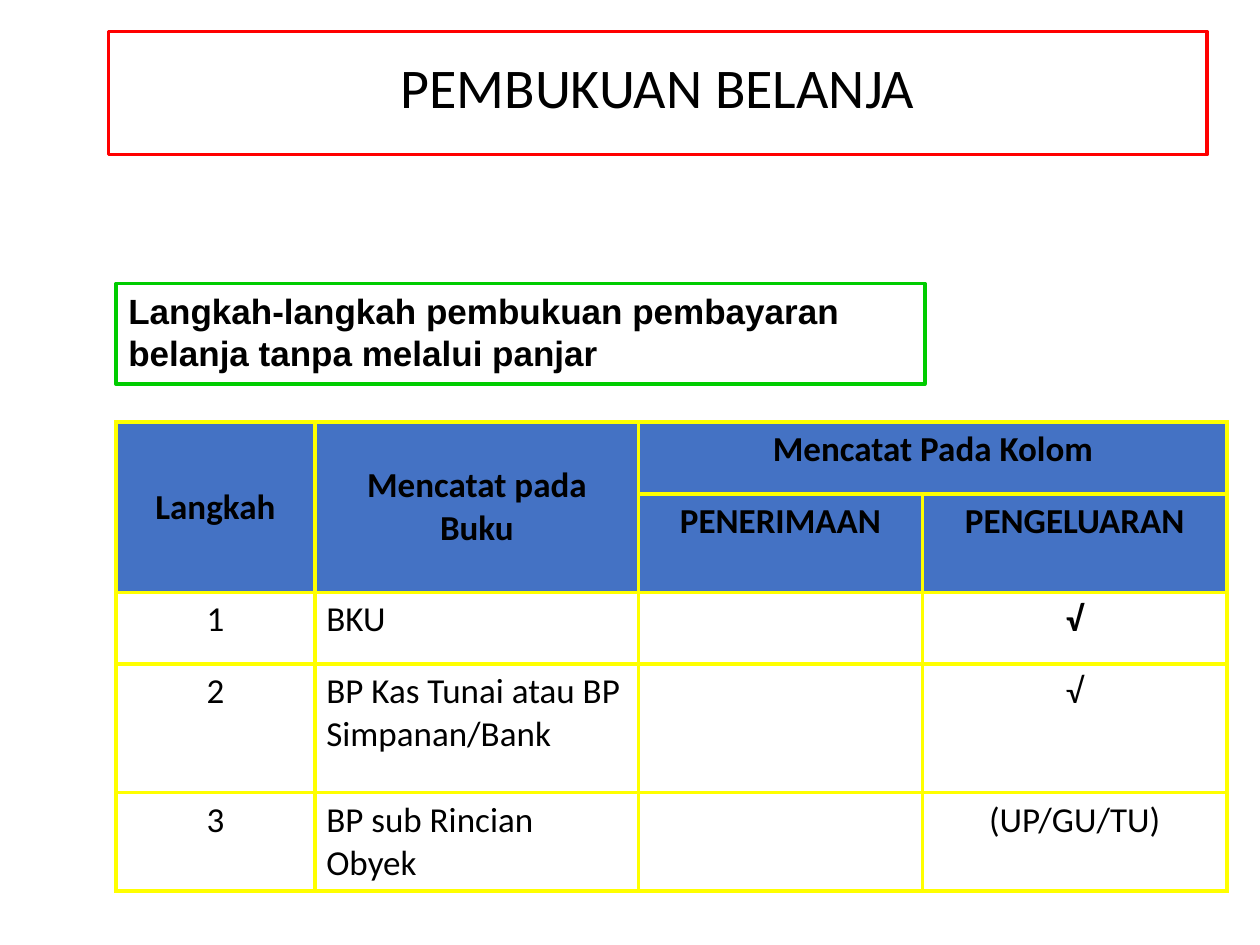
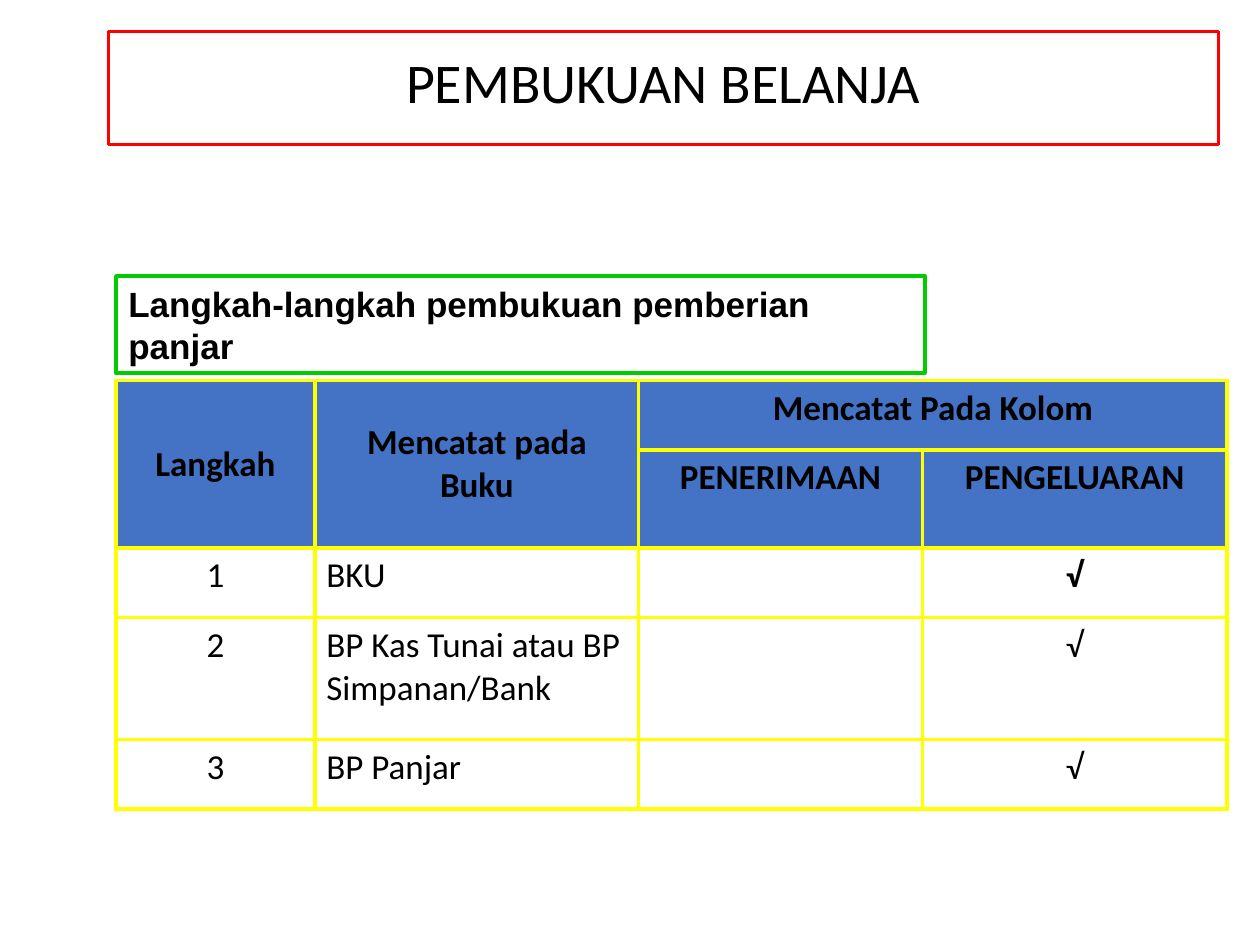
from dataclasses import dataclass
from lxml import etree
from pptx import Presentation
from pptx.dml.color import RGBColor
from pptx.enum.text import MSO_ANCHOR, MSO_AUTO_SIZE, PP_ALIGN
from pptx.oxml.ns import qn
from pptx.util import Inches, Pt

MID, TOP = MSO_ANCHOR.MIDDLE, MSO_ANCHOR.TOP
LEFT, MIDST = PP_ALIGN.LEFT, PP_ALIGN.CENTER
FIXED = MSO_AUTO_SIZE.NONE


@dataclass(frozen=True)
class Theme:
    ink: str = "000000"
    head: str = "4472C4"
    grid: str = "FFFF00"
    frame: str = "FF0000"
    note: str = "00CC00"
    sans: str = "Calibri"
    bold: str = "Arial"
    title: int = 32
    text: int = 20


THEME = Theme()
TITLE = "PEMBUKUAN BELANJA"
HEADS = [
    ["Langkah", "Mencatat pada Buku", "Mencatat Pada Kolom", ""],
    ["", "", "PENERIMAAN", "PENGELUARAN"],
]
MERGES = [((0, 0), (1, 0)), ((0, 1), (1, 1)), ((0, 2), (0, 3))]
STEPS = [
    ["1", "BKU", "", "√"],
    ["2", "BP Kas Tunai atau BP Simpanan/Bank", "", "√"],
]
COLS = [1.58, 2.57, 2.25, 2.42]
EDGE = 0.92
PAGES = [
    {
        "title": (0.86, 0.25, 8.72, 0.98),
        "note": "Langkah-langkah pembukuan pembayaran belanja tanpa melalui panjar",
        "box": (EDGE, 2.25, 6.42, 0.8),
        "top": 3.35,
        "rows": [0.57, 0.57, 0.57, 1.02, 0.57],
        "last": ["3", "BP sub Rincian Obyek", "", "(UP/GU/TU)"],
    },
    {
        "title": (0.86, 0.25, 8.81, 0.9),
        "note": "Langkah-langkah pembukuan pemberian panjar",
        "box": (EDGE, 2.19, 6.42, 0.77),
        "top": 3.02,
        "rows": [0.55, 0.55, 0.55, 0.97, 0.55],
        "last": ["3", "BP Panjar", "", "√"],
    },
]


def write(frame, text, size, font, bold=False, align=LEFT):
    para = frame.paragraphs[0]
    para.alignment = align
    run = para.add_run()
    run.text = text
    run.font.size = Pt(size)
    run.font.name = font
    run.font.bold = bold
    run.font.color.rgb = RGBColor.from_string(THEME.ink)
    return para


def outline(shape, color, width):
    shape.line.color.rgb = RGBColor.from_string(color)
    shape.line.width = Pt(width)


def border(cell):
    props = cell._tc.get_or_add_tcPr()
    for side in ("a:lnL", "a:lnR", "a:lnT", "a:lnB"):
        line = etree.SubElement(props, qn(side), w=str(Pt(2.25)))
        fill = etree.SubElement(line, qn("a:solidFill"))
        etree.SubElement(fill, qn("a:srgbClr"), val=THEME.grid)


def add_title(slide, place):
    title = slide.shapes.title
    title.left, title.top, title.width, title.height = map(Inches, place)
    outline(title, THEME.frame, 1.75)
    frame = title.text_frame
    frame.auto_size = FIXED
    frame.vertical_anchor = MID
    frame.margin_bottom = Inches(0.1)
    para = write(frame, TITLE, THEME.title, THEME.sans, align=MIDST)
    para.line_spacing = 0.9


def add_note(slide, text, place):
    box = slide.shapes.add_textbox(*map(Inches, place))
    outline(box, THEME.note, 2)
    box.text_frame.word_wrap = True
    write(box.text_frame, text, THEME.text, THEME.bold, True)


def add_grid(slide, page):
    data = HEADS + STEPS + [page["last"]]
    rows = page["rows"]
    place = (EDGE, page["top"], sum(COLS), sum(rows))
    grid = slide.shapes.add_table(len(rows), len(COLS), *map(Inches, place)).table
    grid.first_row = grid.horz_banding = False
    for col, width in zip(grid.columns, COLS):
        col.width = Inches(width)
    for row, height in zip(grid.rows, rows):
        row.height = Inches(height)
    for start, end in MERGES:
        grid.cell(*start).merge(grid.cell(*end))
    for r, row in enumerate(data):
        for c, text in enumerate(row):
            cell = grid.cell(r, c)
            head = r < len(HEADS)
            border(cell)
            cell.margin_left = cell.margin_right = Inches(0.09)
            cell.margin_top = cell.margin_bottom = Inches(0.05)
            cell.vertical_anchor = MID if r == 0 and c < 2 else TOP
            if head:
                cell.fill.solid()
                cell.fill.fore_color.rgb = RGBColor.from_string(THEME.head)
            else:
                cell.fill.background()
            if text:
                bold = head or (r == len(HEADS) and c == 3)
                align = LEFT if c == 1 and not head else MIDST
                write(cell.text_frame, text, THEME.text, THEME.sans, bold, align)


def main():
    deck = Presentation()
    deck.slide_width, deck.slide_height = Inches(10), Inches(7.5)
    for page in PAGES:
        slide = deck.slides.add_slide(deck.slide_layouts[5])
        add_grid(slide, page)
        add_note(slide, page["note"], page["box"])
        add_title(slide, page["title"])
    deck.save("out.pptx")


if __name__ == "__main__":
    main()
